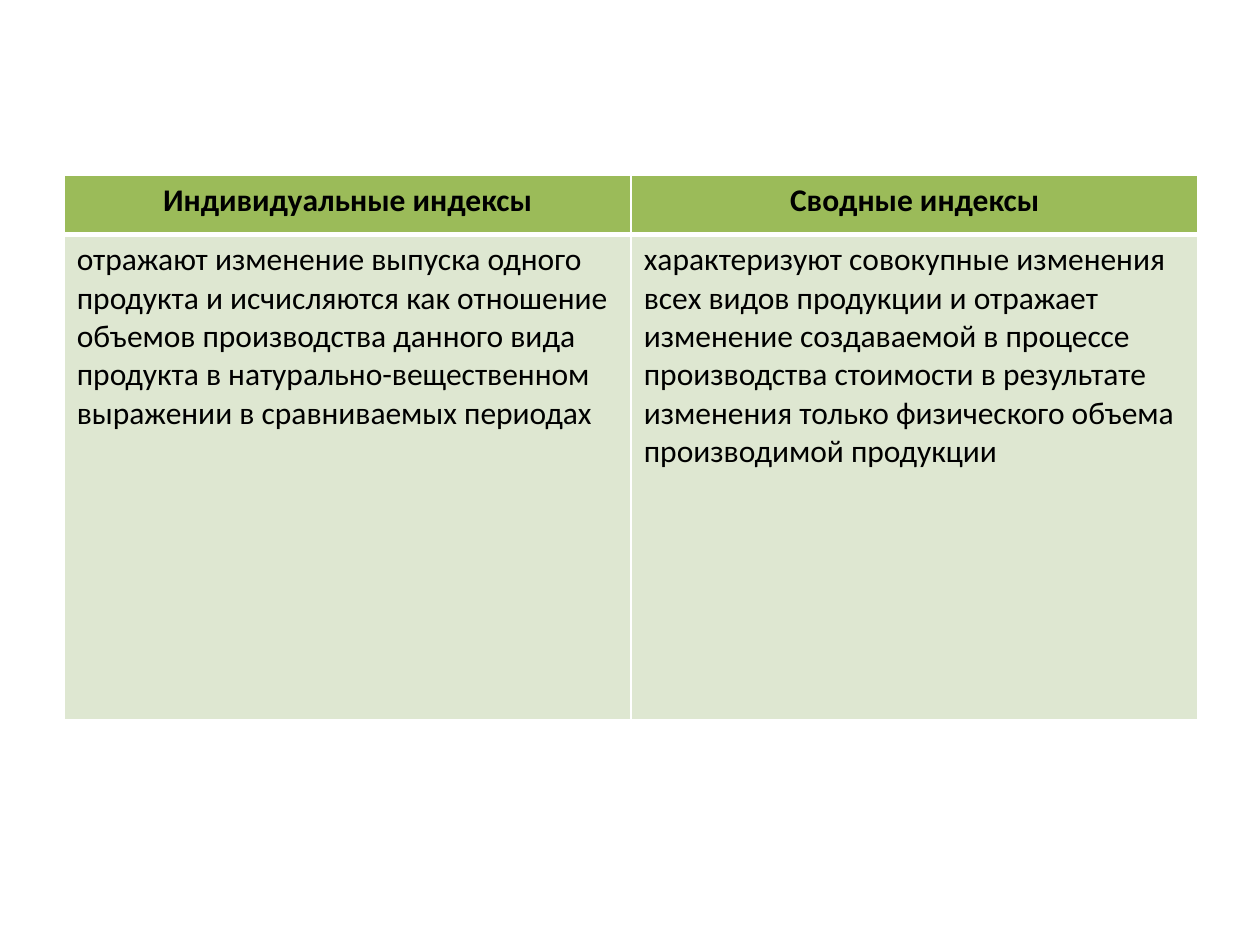
from lxml import etree
from pptx import Presentation
from pptx.dml.color import RGBColor
from pptx.enum.text import PP_ALIGN
from pptx.oxml.ns import qn
from pptx.util import Inches, Pt

LEFT, CENTER = PP_ALIGN.LEFT, PP_ALIGN.CENTER
HEADER_FILL, BODY_FILL, WHITE, BLACK = "9BBB59", "DEE7D1", "FFFFFF", "000000"
THIN, THICK = 1, 3

INDEX_TYPES = {
    "Индивидуальные индексы":
        "отражают изменение выпуска одного продукта и исчисляются как "
        "отношение объемов производства данного вида продукта в "
        "натурально-вещественном выражении в сравниваемых периодах",
    "Сводные индексы":
        "характеризуют совокупные изменения всех видов продукции и отражает "
        "изменение создаваемой в процессе производства стоимости в результате "
        "изменения только физического объема производимой продукции",
}


def color(value):
    """Turn a hex string into a colour."""
    return RGBColor.from_string(value)


def write(tf, text, size=18, bold=False, align=LEFT, ink=BLACK, font="Calibri"):
    """Write one formatted paragraph into a text frame."""
    p = tf.paragraphs[0]
    p.alignment = align
    r = p.add_run()
    r.text = text
    r.font.name, r.font.size, r.font.bold = font, Pt(size), bold
    r.font.color.rgb = color(ink)


def set_borders(cell, top=THIN, bottom=THIN, line=WHITE):
    """Draw the four borders of a cell, with widths in points."""
    tc_pr = cell._tc.get_or_add_tcPr()
    for side, width in (("L", THIN), ("R", THIN), ("T", top), ("B", bottom)):
        ln = etree.SubElement(tc_pr, qn(f"a:ln{side}"), w=str(Pt(width)))
        fill = etree.SubElement(ln, qn("a:solidFill"))
        etree.SubElement(fill, qn("a:srgbClr"), val=line)


def style_cell(cell, fill, **borders):
    """Give a cell its borders and background."""
    set_borders(cell, **borders)
    cell.fill.solid()
    cell.fill.fore_color.rgb = color(fill)


def add_comparison(slide, left, top, width, height, header_height):
    """Place the two-column table comparing the index types."""
    columns = len(INDEX_TYPES)
    table = slide.shapes.add_table(2, columns, left, top, width, height).table
    table.rows[0].height = header_height
    table.rows[1].height = height - header_height
    for i, (title, description) in enumerate(INDEX_TYPES.items()):
        table.columns[i].width = width // columns
        header, body = table.cell(0, i), table.cell(1, i)
        style_cell(header, HEADER_FILL, bottom=THICK)
        style_cell(body, BODY_FILL, top=THICK)
        write(header.text_frame, title, bold=True, align=CENTER)
        write(body.text_frame, description)


def main():
    """Build and save the slide."""
    prs = Presentation()
    prs.slide_width, prs.slide_height = Inches(10), Inches(7.5)
    slide = prs.slides.add_slide(prs.slide_layouts[6])
    add_comparison(slide, Inches(0.51), Inches(1.39), Inches(9), Inches(4.32),
                   header_height=Inches(0.47))
    prs.save("out.pptx")


if __name__ == "__main__":
    main()
